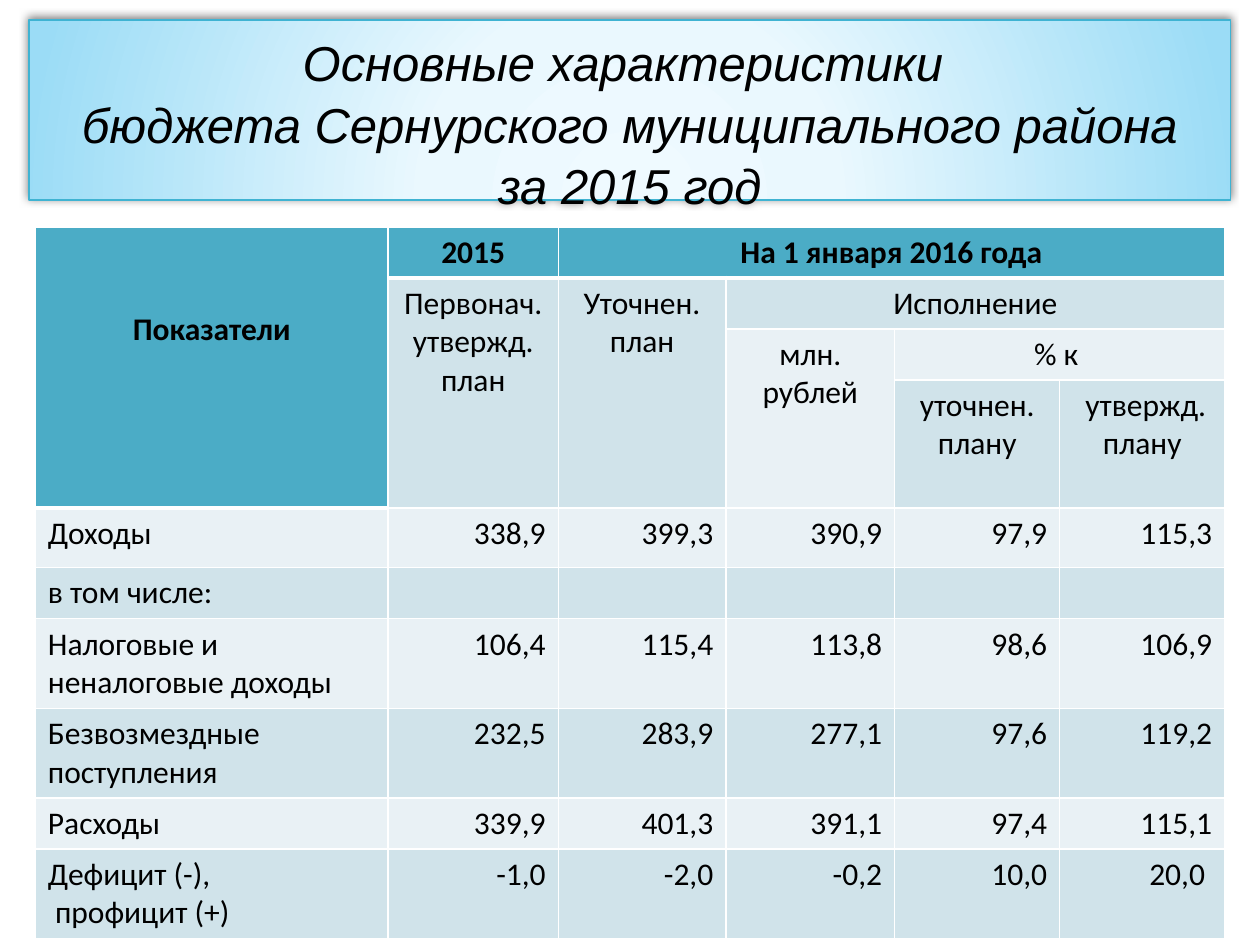
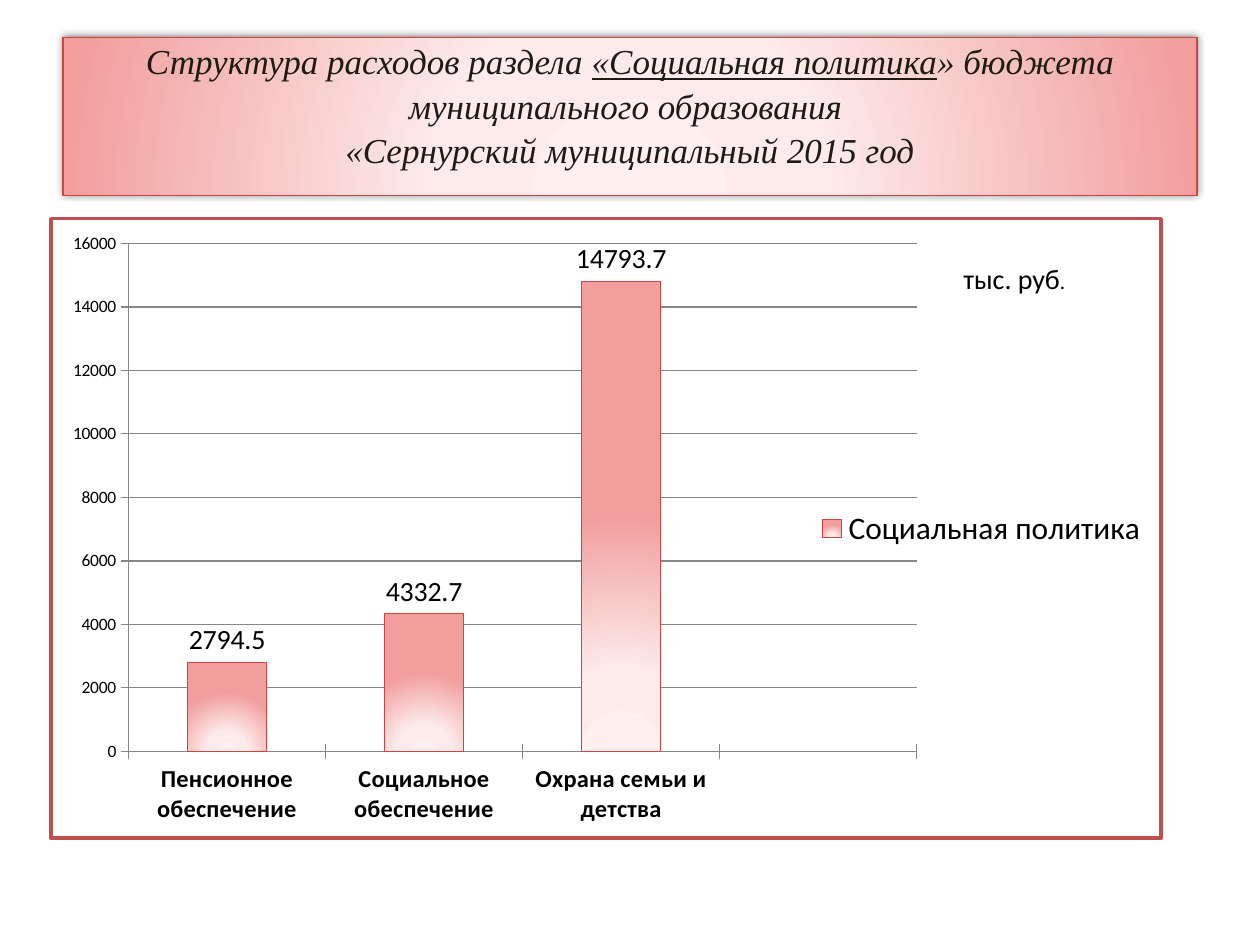
"""Budget of the Sernur district: a table of main figures and a chart of social spending."""
from lxml import etree
from pptx import Presentation
from pptx.chart.data import CategoryChartData
from pptx.dml.color import RGBColor
from pptx.enum.chart import XL_CHART_TYPE, XL_LABEL_POSITION, XL_LEGEND_POSITION, XL_TICK_MARK
from pptx.enum.shapes import MSO_SHAPE
from pptx.enum.text import MSO_ANCHOR, PP_ALIGN
from pptx.oxml import parse_xml
from pptx.oxml.ns import nsdecls, qn
from pptx.util import Pt

LEFT, MID, RIGHT = PP_ALIGN.LEFT, PP_ALIGN.CENTER, PP_ALIGN.RIGHT
RECT = MSO_SHAPE.RECTANGLE
TOP = MSO_ANCHOR.TOP
BARS = XL_CHART_TYPE.COLUMN_CLUSTERED
CROSS = XL_TICK_MARK.CROSS
OUTER = XL_LABEL_POSITION.OUTSIDE_END
SIDE = XL_LEGEND_POSITION.RIGHT

HUES = {
    "black": "000000", "white": "FFFFFF", "ink": "1E1C11", "grey": "868686",
    "head": "4BACC6", "dark": "D0E3EA", "light": "E9F1F5",
    "teal": "3FB3D2", "red": "CC4542", "frame": "C0504D",
}
BLUES = ("EFFAFF", "EAF8FE", "9BDCF6")
PINKS = ("FFEFEF", "FDEBEB", "F19E9D")


def hue(name):
    return RGBColor.from_string(HUES[name])


def write(para, text, size=18, font="Calibri", color="black", bold=False,
          italic=False, under=False, align=MID):
    """Add text to a paragraph, with a line break at each newline."""
    para.alignment = align
    for num, line in enumerate(text.split("\n")):
        if num:
            para.add_line_break()
        run = para.add_run()
        run.text = line
        face = run.font
        face.size, face.name = Pt(size), font
        face.bold, face.italic, face.underline = bold, italic, under
        face.color.rgb = hue(color)


deck = Presentation()
deck.slide_width, deck.slide_height = Pt(720), Pt(540)
blank = deck.slide_layouts[6]

bands = [
    dict(box=(16.6, 11.4, 686.4, 103), stops=BLUES, edge="teal", inset=5.5, wrap=False,
         look=dict(size=28, font="Arial"),
         runs=[("Основные характеристики \nбюджета Сернурского муниципального района\n"
                "за 2015 год", False)]),
    dict(box=(36, 21.6, 648, 90), stops=PINKS, edge="red", inset=0, wrap=True,
         look=dict(size=20, font="Times New Roman", color="ink"),
         runs=[("Структура расходов раздела ", False), ("«Социальная политика", True),
               ("» бюджета муниципального образования \n"
                "«Сернурский муниципальный 2015 год", False)]),
]
fades = []
slides = []
for band in bands:
    slide = deck.slides.add_slide(blank)
    slides.append(slide)
    shape = slide.shapes.add_shape(RECT, *map(Pt, band["box"]))
    shape.fill.solid()
    shape.line.color.rgb, shape.line.width = hue(band["edge"]), Pt(0.75)
    fades.append((shape._element.spPr, band["stops"]))
    shape.shadow.inherit = False
    glow = shape._element.spPr.find(qn("a:effectLst"))
    glow.append(parse_xml(
        f'<a:outerShdw {nsdecls("a")} blurRad="63500" dist="25400" dir="14700000" '
        'algn="t" rotWithShape="0"><a:srgbClr val="000000"><a:alpha val="50000"/>'
        '</a:srgbClr></a:outerShdw>'))
    frame = shape.text_frame
    frame.word_wrap, frame.vertical_anchor = band["wrap"], TOP
    frame.margin_top, frame.margin_bottom = Pt(band["inset"]), Pt(0)
    para = frame.paragraphs[0]
    para.line_spacing = 1.05
    for text, under in band["runs"]:
        write(para, text, italic=True, under=under, **band["look"])

widths = [201.6, 97.2, 95.8, 96.5, 94.3, 94.3]
heights = [29, 29, 29, 73, 34, 29, 51, 51, 29, 51]
grid = slides[0].shapes.add_table(
    len(heights), len(widths), Pt(20.2), Pt(129.6), Pt(sum(widths)), Pt(sum(heights))).table
for col, width in zip(grid.columns, widths):
    col.width = Pt(width)
for row, height in zip(grid.rows, heights):
    row.height = Pt(height)

heads = [
    (0, 0, 4, 1, "Показатели"), (0, 1, 1, 1, "2015"), (0, 2, 1, 4, "На 1 января 2016 года"),
    (1, 1, 3, 1, "Первонач. утвержд. план"), (1, 2, 3, 1, "Уточнен.\nплан"),
    (1, 3, 1, 3, "Исполнение"), (2, 3, 2, 1, "млн. рублей"), (2, 4, 1, 2, "% к "),
    (3, 4, 1, 1, "уточнен. плану"), (3, 5, 1, 1, " утвержд. плану"),
]
rows = [
    ("Доходы", "338,9", "399,3", "390,9", "97,9", "115,3"),
    ("в том числе:", "", "", "", "", ""),
    ("Налоговые и неналоговые доходы", "106,4", "115,4", "113,8", "98,6", "106,9"),
    ("Безвозмездные поступления", "232,5", "283,9", "277,1", "97,6", "119,2"),
    ("Расходы", "339,9", "401,3", "391,1", "97,4", "115,1"),
    ("Дефицит (-),\n профицит (+)", "-1,0", "-2,0", "-0,2", "10,0", "20,0 "),
]
for r in range(len(heights)):
    for c in range(len(widths)):
        cell = grid.cell(r, c)
        top = r == 0 or (c == 0 and r < 4)
        cell.fill.solid()
        cell.fill.fore_color.rgb = hue("head" if top else "dark" if r % 2 else "light")
        props = cell._tc.get_or_add_tcPr()
        for spot, side in enumerate("LRTB"):
            thick = 3 if side == "B" and (r == 0 or (c == 0 and r == 3)) else 1
            props.insert(spot, parse_xml(
                f'<a:ln{side} {nsdecls("a")} w="{Pt(thick)}"><a:solidFill>'
                f'<a:srgbClr val="{HUES["white"]}"/></a:solidFill></a:ln{side}>'))
for r, c, tall, wide, text in heads:
    cell = grid.cell(r, c)
    if tall * wide > 1:
        cell.merge(grid.cell(r + tall - 1, c + wide - 1))
    write(cell.text_frame.paragraphs[0], text, bold=r == 0)
grid.cell(0, 0).margin_top = Pt(47.6)
for r, row in enumerate(rows, 4):
    for c, text in enumerate(row):
        write(grid.cell(r, c).text_frame.paragraphs[0], text, align=RIGHT if c else LEFT)

data = CategoryChartData()
data.categories = ["Пенсионное обеспечение", "Социальное обеспечение", "Охрана семьи и детства", ""]
data.add_series("Социальная политика", (2794.5, 4332.7, 14793.7, None))
chart = slides[1].shapes.add_chart(BARS, Pt(28), Pt(124), Pt(636.5), Pt(356), data).chart
chart.has_title = False
chart.font.size, chart.font.name = Pt(10), "Calibri"
chart.font.color.rgb = hue("black")
chart.has_legend = True
chart.legend.position, chart.legend.include_in_layout = SIDE, False
chart.legend.font.size = Pt(18)
for axis in (chart.category_axis, chart.value_axis):
    axis.major_tick_mark = CROSS
    axis.format.line.color.rgb = hue("grey")
names, scale = chart.category_axis, chart.value_axis
names.tick_labels.font.size, names.tick_labels.font.bold = Pt(14), True
scale.minimum_scale, scale.maximum_scale, scale.major_unit = 0, 16000, 2000
scale.major_gridlines.format.line.color.rgb = hue("grey")
plot = chart.plots[0]
plot.gap_width, plot.vary_by_categories = 150, False
plot.has_data_labels = True
tags = plot.data_labels
tags.show_value, tags.position, tags.font.size = True, OUTER, Pt(16)
bars = plot.series[0]
bars.format.fill.solid()
bars.format.line.color.rgb, bars.format.line.width = hue("red"), Pt(0.75)
fades.append((bars._element.spPr, PINKS))

space = chart._chartSpace
space.find(qn("c:chart")).addnext(parse_xml(
    f'<c:spPr {nsdecls("c", "a")}><a:solidFill><a:srgbClr val="{HUES["white"]}"/></a:solidFill>'
    f'<a:ln w="{Pt(2)}"><a:solidFill><a:srgbClr val="{HUES["frame"]}"/></a:solidFill></a:ln>'
    '</c:spPr>'))
area = space.find(qn("c:chart")).find(qn("c:plotArea"))
for old in area.findall(qn("c:layout")):
    area.remove(old)
place = parse_xml(f'<c:layout {nsdecls("c")}><c:manualLayout/></c:layout>')
area.insert(0, place)
for tag, val in (("layoutTarget", "inner"), ("xMode", "edge"), ("yMode", "edge"),
                 ("x", "0.07"), ("y", "0.04"), ("w", "0.71"), ("h", "0.82")):
    etree.SubElement(place[0], qn("c:" + tag)).set("val", val)

for props, stops in fades:
    marks = "".join(f'<a:gs pos="{pos}"><a:srgbClr val="{tone}"/></a:gs>'
                    for pos, tone in zip((0, 34000, 100000), stops))
    props.replace(props.find(qn("a:solidFill")), parse_xml(
        f'<a:gradFill {nsdecls("a")} rotWithShape="1"><a:gsLst>{marks}</a:gsLst>'
        '<a:path path="circle"><a:fillToRect l="50000" t="155000" r="50000" b="-55000"/>'
        '</a:path></a:gradFill>'))

note = slides[1].shapes.add_textbox(Pt(517.7), Pt(146.2), Pt(123.8), Pt(26.6)).text_frame
note.word_wrap = True
for text, size in (("тыс. руб", 16), (".", 12)):
    write(note.paragraphs[0], text, size=size)

deck.save("out.pptx")
